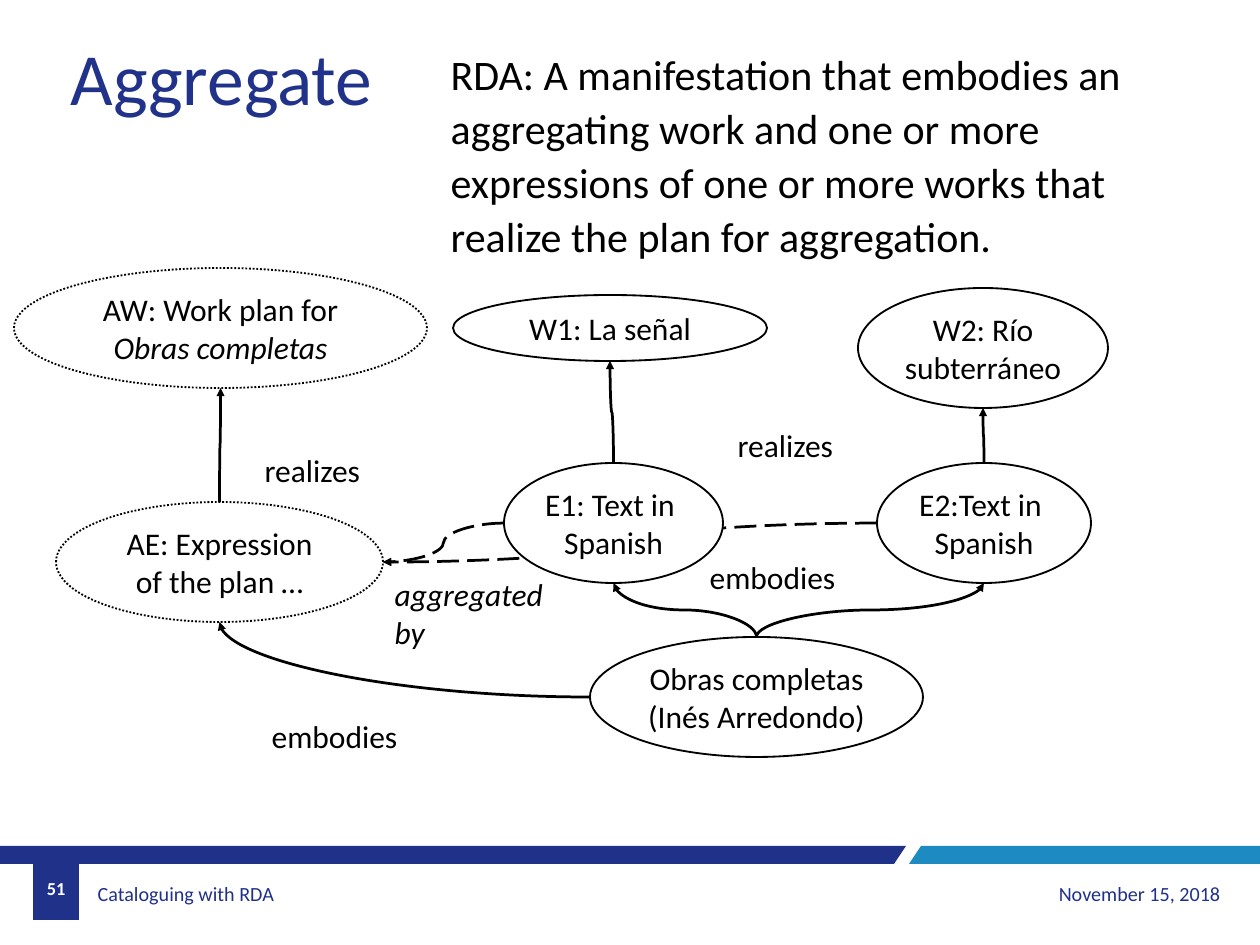
import pptx
import pptx.util
import pptx.dml.color
import pptx.enum.dml
import pptx.enum.shapes
import pptx.enum.text
import lxml.etree

PX = 914400 / 88.2
WIDTH, HEIGHT = 1260, 945

RGB = pptx.dml.color.RGBColor.from_string
DASH = pptx.enum.dml.MSO_LINE
ALIGN = pptx.enum.text.PP_ALIGN
ANCHOR = pptx.enum.text.MSO_ANCHOR
SHAPE = pptx.enum.shapes.MSO_SHAPE
CURVE = pptx.enum.shapes.MSO_CONNECTOR.CURVE

THEME = {
    "font": "Calibri",
    "ink": "000000", "white": "FFFFFF", "navy": "203189", "blue": "1D8BC1", "title": "21328A",
    "title_size": 60, "body_size": 34.3, "label_size": 25.7, "footer_size": 16.4, "number_size": 14.9,
    "outline": 1.5, "arrow": 2.25,
}

BARS = [
    ("navy", [(906, 846), (0, 846), (0, 864), (894, 864)]),
    ("blue", [(1260, 846), (921, 846), (909, 864), (1260, 864)]),
    ("navy", [(33, 846), (79, 846), (79, 920), (33, 920)]),
]

ENTITIES = {
    "Obras": {"box": (590, 637, 333, 120), "lines": ["Obras completas", "(Inés Arredondo)"], "wrap": False},
    "E1": {"box": (504, 463, 219, 120), "lines": ["E1: Text in ", "Spanish"], "wrap": False, "fill": "white"},
    "W1": {"box": (453, 295, 314, 66), "lines": ["W1: La señal"]},
    "E2": {"box": (877, 463, 214, 120), "lines": ["E2:Text in ", "Spanish"], "wrap": False},
    "W2": {"box": (858, 288, 250, 120), "lines": ["W2: Río subterráneo"]},
    "AE": {"box": (56, 502, 327, 120), "lines": ["AE: Expression of the plan …"], "dotted": True},
    "AW": {"box": (14, 268, 413, 120), "lines": ["AW: Work plan for", "Obras completas"], "dotted": True,
           "italic_lines": [1]},
}

AGGREGATED_BY = [("E1", "left", "AE", "right"), ("E2", "left", "AE", "right")]
RELATIONS = [
    ("AE", "top", "AW", "bottom"),
    ("E1", "top", "W1", "bottom"),
    ("E2", "top", "W2", "bottom"),
    ("Obras", "left", "AE", "bottom"),
    ("Obras", "top", "E2", "bottom"),
    ("Obras", "top", "E1", "bottom"),
]

DEFINITION = ("RDA: A manifestation that embodies an aggregating work and one or more "
              "expressions of one or more works that realize the plan for aggregation.")

FOOTER = {"size": "footer_size", "color": "navy", "anchor": ANCHOR.MIDDLE}
TEXTS = [
    ((62, 28, 323, 98), ["Aggregate"], {"size": "title_size", "color": "title", "wrap": False}),
    ((442, 41, 761, 224), [DEFINITION],
     {"size": "body_size", "para": {"line_spacing": 1.07, "space_after": pptx.util.Pt(11.4)}}),
    ((729, 422, 130, 47), ["realizes"], {}),
    ((701, 554, 164, 47), ["embodies"], {}),
    ((256, 447, 130, 47), ["realizes"], {}),
    ((263, 713, 164, 47), ["embodies"], {}),
    ((386, 571, 172, 86), ["aggregated", "by"], {"italic_lines": [0, 1]}),
    ((33, 864, 46, 49), ["51"], {"size": "number_size", "color": "white", "bold": True,
                                 "anchor": ANCHOR.MIDDLE, "para": {"alignment": ALIGN.CENTER}}),
    ((89, 869, 487, 49), ["Cataloguing with RDA"], FOOTER),
    ((906, 869, 323, 49), ["November 15, 2018"], {**FOOTER, "para": {"alignment": ALIGN.RIGHT}}),
]


def emu(*lengths):
    return [pptx.util.Emu(round(v * PX)) for v in lengths]


def apply(target, values):
    for name, value in values.items():
        setattr(target, name, value)


def write(tf, lines, size="label_size", color="ink", bold=False, wrap=True,
          anchor=ANCHOR.TOP, italic_lines=(), para=None):
    apply(tf, {"word_wrap": wrap, "vertical_anchor": anchor})
    for i, line in enumerate(lines):
        p = tf.paragraphs[0] if i == 0 else tf.add_paragraph()
        apply(p, para or {})
        r = p.add_run()
        r.text = line
        apply(r.font, {"name": THEME["font"], "size": pptx.util.Pt(THEME[size]),
                       "bold": bold, "italic": i in italic_lines})
        r.font.color.rgb = RGB(THEME[color])


def add_bar(s, color, points):
    builder = s.shapes.build_freeform(*points[0], scale=PX)
    builder.add_line_segments(points[1:], close=True)
    sp = builder.convert_to_shape()
    sp.shadow.inherit = False
    sp.fill.solid()
    sp.fill.fore_color.rgb = RGB(THEME[color])
    sp.line.fill.background()


def add_entity(s, box, lines, wrap=True, fill=None, dotted=False, italic_lines=()):
    sp = s.shapes.add_shape(SHAPE.OVAL, *emu(*box))
    sp.shadow.inherit = False
    if fill:
        sp.fill.solid()
        sp.fill.fore_color.rgb = RGB(THEME[fill])
    else:
        sp.fill.background()
    sp.line.color.rgb = RGB(THEME["ink"])
    sp.line.width = pptx.util.Pt(THEME["outline"])
    if dotted:
        sp.line.dash_style = DASH.ROUND_DOT
    write(sp.text_frame, lines, wrap=wrap, anchor=ANCHOR.MIDDLE,
          italic_lines=italic_lines, para={"alignment": ALIGN.CENTER})


def side_point(name, side):
    x, y, w, h = ENTITIES[name]["box"]
    return {"top": (x + w / 2, y), "bottom": (x + w / 2, y + h),
            "left": (x, y + h / 2), "right": (x + w, y + h / 2)}[side]


def add_arrow(s, source, source_side, target, target_side, dash=None):
    x1, y1 = side_point(source, source_side)
    x2, y2 = side_point(target, target_side)
    w, h = abs(x2 - x1), abs(y2 - y1)
    if source_side == "left":
        turn, flips = 180, ["flipV"] if y2 > y1 else []
    else:
        w, h = h, w
        turn, flips = (90, ["flipH", "flipV"]) if x2 > x1 else (270, ["flipV"])
    left, top = (x1 + x2 - w) / 2, (y1 + y2 - h) / 2
    c = s.shapes.add_connector(CURVE, *emu(left, top, left + w, top + h))
    c.line.color.rgb = RGB(THEME["ink"])
    c.line.width = pptx.util.Pt(THEME["arrow"])
    if dash:
        c.line.dash_style = dash
    props = c._element.spPr
    xfrm = props.find(pptx.oxml.ns.qn("a:xfrm"))
    xfrm.set("rot", str(turn * 60000))
    for flip in flips:
        xfrm.set(flip, "1")
    if source_side == "left" and target_side == "bottom":
        props.find(pptx.oxml.ns.qn("a:prstGeom")).set("prst", "curvedConnector2")
    ln = props.find(pptx.oxml.ns.qn("a:ln"))
    lxml.etree.SubElement(ln, pptx.oxml.ns.qn("a:tailEnd"), type="triangle")
    lxml.etree.SubElement(props, pptx.oxml.ns.qn("a:effectLst"))


def main():
    prs = pptx.Presentation()
    prs.slide_width, prs.slide_height = emu(WIDTH, HEIGHT)
    s = prs.slides.add_slide(prs.slide_layouts[6])
    for color, points in BARS:
        add_bar(s, color, points)
    for relation in AGGREGATED_BY:
        add_arrow(s, *relation, dash=DASH.LONG_DASH)
    for entity in ENTITIES.values():
        add_entity(s, **entity)
    for relation in RELATIONS:
        add_arrow(s, *relation)
    for box, lines, style in TEXTS:
        write(s.shapes.add_textbox(*emu(*box)).text_frame, lines, **style)
    prs.save("out.pptx")


if __name__ == "__main__":
    main()
